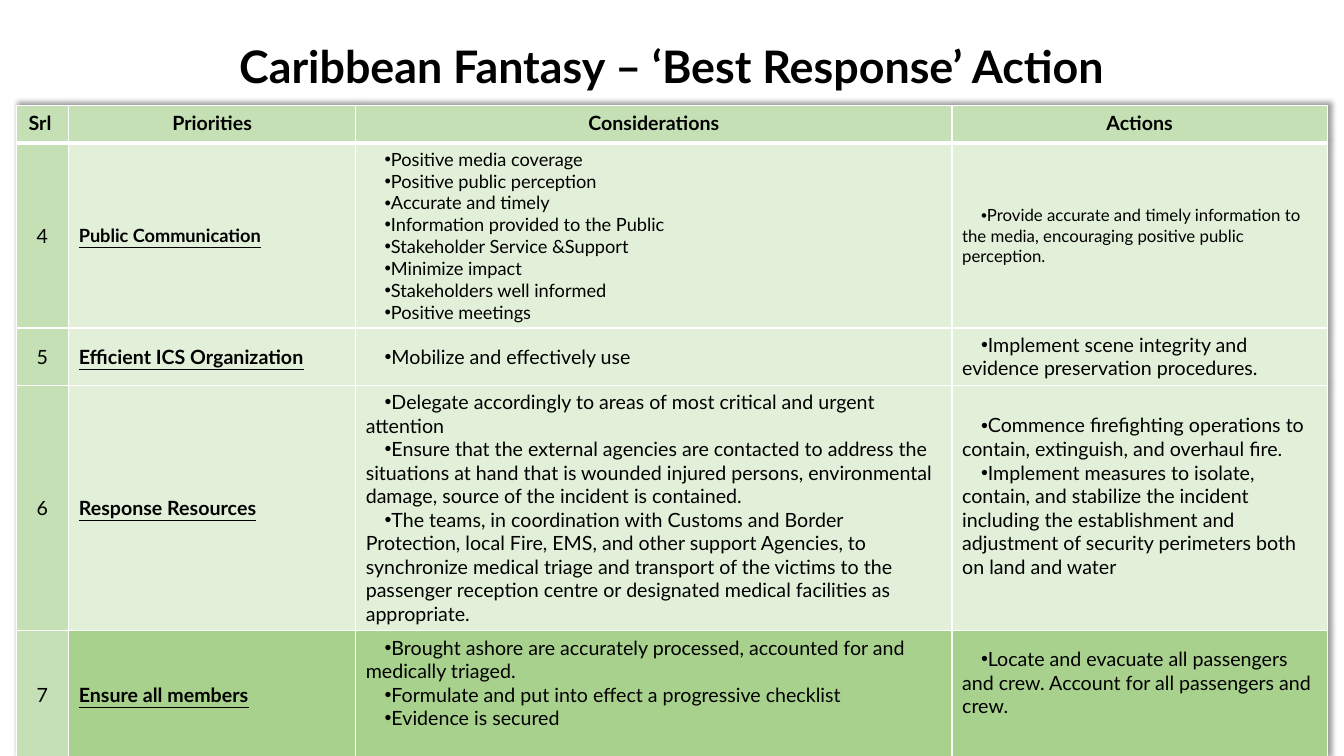
from dataclasses import dataclass

from lxml.etree import SubElement, fromstring
from pptx import Presentation
from pptx.dml.color import RGBColor
from pptx.enum.text import MSO_ANCHOR as Anchor, PP_ALIGN as Align
from pptx.oxml.ns import nsdecls, qn
from pptx.util import Pt


@dataclass(frozen=True)
class Theme:
    font: str = "Lato"
    ink: str = "000000"
    grid: str = "FFFFFF"
    heading: str = "C5E0B4"
    pale: str = "E2F0D9"
    strong: str = "A9D18E"
    title_size: float = 32
    body_size: float = 14
    compact_size: float = 13
    small_size: float = 12


@dataclass(frozen=True)
class Priority:
    number: str
    name: str
    considerations: tuple
    actions: tuple
    height: float
    fill: str
    size: float = Theme.body_size
    action_size: float = Theme.body_size
    considerations_gap: float = 0
    actions_gap: float = 0


LINE_GAP = 17
TABLE_LEFT, TABLE_TOP = 11.5, 75.6
COLUMN_WIDTHS = (37.6, 205, 426, 268)
HEADINGS = ("Srl ", "Priorities", "Considerations", "Actions")
HEADING_HEIGHT = 26.7
PRIORITIES = (
    Priority(
        "4", "Public Communication",
        ("Positive media coverage",
         "Positive public perception",
         "Accurate and timely",
         "Information provided to the Public",
         "Stakeholder Service &Support",
         "Minimize impact",
         "Stakeholders well informed",
         "Positive meetings"),
        ("Provide accurate and timely information to the media, "
         "encouraging positive public perception.",),
        132, Theme.pale, Theme.compact_size, Theme.small_size),
    Priority(
        "5", "Efficient ICS Organization",
        ("Mobilize and effectively use",),
        ("Implement scene integrity and evidence preservation procedures.",),
        40.8, Theme.pale),
    Priority(
        "6", "Response Resources",
        ("Delegate accordingly to areas of most critical and urgent attention",
         "Ensure that the external agencies are contacted to address the "
         "situations at hand that is wounded injured persons, environmental "
         "damage, source of the incident is contained.",
         "The teams, in coordination with Customs and Border Protection, local "
         "Fire, EMS, and other support Agencies, to synchronize medical triage "
         "and transport of the victims to the passenger reception centre or "
         "designated medical facilities as appropriate."),
        ("Commence firefighting operations to contain, extinguish, and "
         "overhaul fire.",
         "Implement measures to isolate, contain, and stabilize the incident "
         "including the establishment and adjustment of security perimeters "
         "both on land and water"),
        175.2, Theme.pale, actions_gap=LINE_GAP),
    Priority(
        "7", "Ensure all members",
        ("Brought ashore are accurately processed, accounted for and "
         "medically triaged.",
         "Formulate and put into effect a progressive checklist",
         "Evidence is secured"),
        ("Locate and evacuate all passengers and crew. Account for all "
         "passengers and crew.",),
        91.4, Theme.strong,
        considerations_gap=LINE_GAP, actions_gap=LINE_GAP),
)


class SlideBuilder:
    def __init__(self, slide, theme):
        self.slide = slide
        self.theme = theme

    def run(self, paragraph, text, size, bold=False, underline=False):
        run = paragraph.add_run()
        run.text = text
        font = run.font
        font.name, font.size = self.theme.font, Pt(size)
        font.bold, font.underline = bold, underline
        font.color.rgb = RGBColor.from_string(self.theme.ink)

    def title(self, text, left, top, width, height):
        title = self.slide.shapes.title
        title.left, title.top = Pt(left), Pt(top)
        title.width, title.height = Pt(width), Pt(height)
        frame = title.text_frame
        frame.word_wrap = True
        frame.vertical_anchor = Anchor.MIDDLE
        paragraph = frame.paragraphs[0]
        paragraph.alignment = Align.CENTER
        paragraph.line_spacing = 0.9
        self.run(paragraph, text, self.theme.title_size, bold=True)

    def table(self, left, top, widths, heights):
        table = self.slide.shapes.add_table(
            len(heights), len(widths), Pt(left), Pt(top),
            Pt(sum(widths)), Pt(sum(heights))).table
        table.horz_banding = False
        for column, width in zip(table.columns, widths):
            column.width = Pt(width)
        for row, height in zip(table.rows, heights):
            row.height = Pt(height)
        self.table_shadow(table)
        return table

    def table_shadow(self, table):
        shadow = fromstring(
            f'<a:effectLst {nsdecls("a")}>'
            f'<a:outerShdw blurRad="{Pt(4)}" dist="{Pt(3)}" dir="18900000" '
            'algn="bl" rotWithShape="0"><a:prstClr val="black">'
            '<a:alpha val="40000"/></a:prstClr></a:outerShdw></a:effectLst>')
        table._tbl.tblPr.insert(0, shadow)

    def cell(self, cell, texts, fill, size, align=Align.LEFT, bold=False,
             underline=False, bullets=False, heading=False, gap=0):
        """Fill one table cell; gap is extra room under its text."""
        tc_pr = cell._tc.get_or_add_tcPr()
        for side in "LRTB":
            width = 3 if heading and side == "B" else 1
            line = SubElement(tc_pr, qn(f"a:ln{side}"), w=str(Pt(width)))
            paint = SubElement(line, qn("a:solidFill"))
            SubElement(paint, qn("a:srgbClr"), val=self.theme.grid)
        cell.fill.solid()
        cell.fill.fore_color.rgb = RGBColor.from_string(fill)
        cell.vertical_anchor = Anchor.TOP if heading else Anchor.MIDDLE
        cell.margin_bottom = Pt(3.6 + gap)
        frame = cell.text_frame
        for index, text in enumerate(texts):
            paragraph = frame.add_paragraph() if index else frame.paragraphs[0]
            paragraph.alignment = align
            if bullets:
                self.bullet(paragraph)
            self.run(paragraph, text, size, bold, underline)

    def bullet(self, paragraph):
        p_pr = paragraph._p.get_or_add_pPr()
        p_pr.set("marL", "0")
        p_pr.set("indent", str(Pt(13.5)))
        SubElement(p_pr, qn("a:buFont"), typeface="Arial")
        SubElement(p_pr, qn("a:buChar"), char="•")


def main():
    deck = Presentation()
    deck.slide_width, deck.slide_height = Pt(960), Pt(540)
    theme = Theme()
    builder = SlideBuilder(deck.slides.add_slide(deck.slide_layouts[5]), theme)
    builder.title("Caribbean Fantasy – ‘Best Response’ Action",
                  66, 22.3, 828, 54)

    heights = [HEADING_HEIGHT] + [item.height for item in PRIORITIES]
    table = builder.table(TABLE_LEFT, TABLE_TOP, COLUMN_WIDTHS, heights)
    for column, heading in enumerate(HEADINGS):
        builder.cell(table.cell(0, column), [heading], theme.heading,
                     theme.body_size, Align.CENTER, bold=True, heading=True)
    for row, item in enumerate(PRIORITIES, 1):
        number, name, considerations, actions = (
            table.cell(row, column) for column in range(len(HEADINGS)))
        builder.cell(number, [item.number], theme.heading, theme.body_size,
                     Align.CENTER)
        builder.cell(name, [item.name], item.fill, item.size,
                     bold=True, underline=True)
        builder.cell(considerations, item.considerations, item.fill, item.size,
                     bullets=True, gap=item.considerations_gap)
        builder.cell(actions, item.actions, item.fill, item.action_size,
                     bullets=True, gap=item.actions_gap)
    deck.save("out.pptx")


if __name__ == "__main__":
    main()
